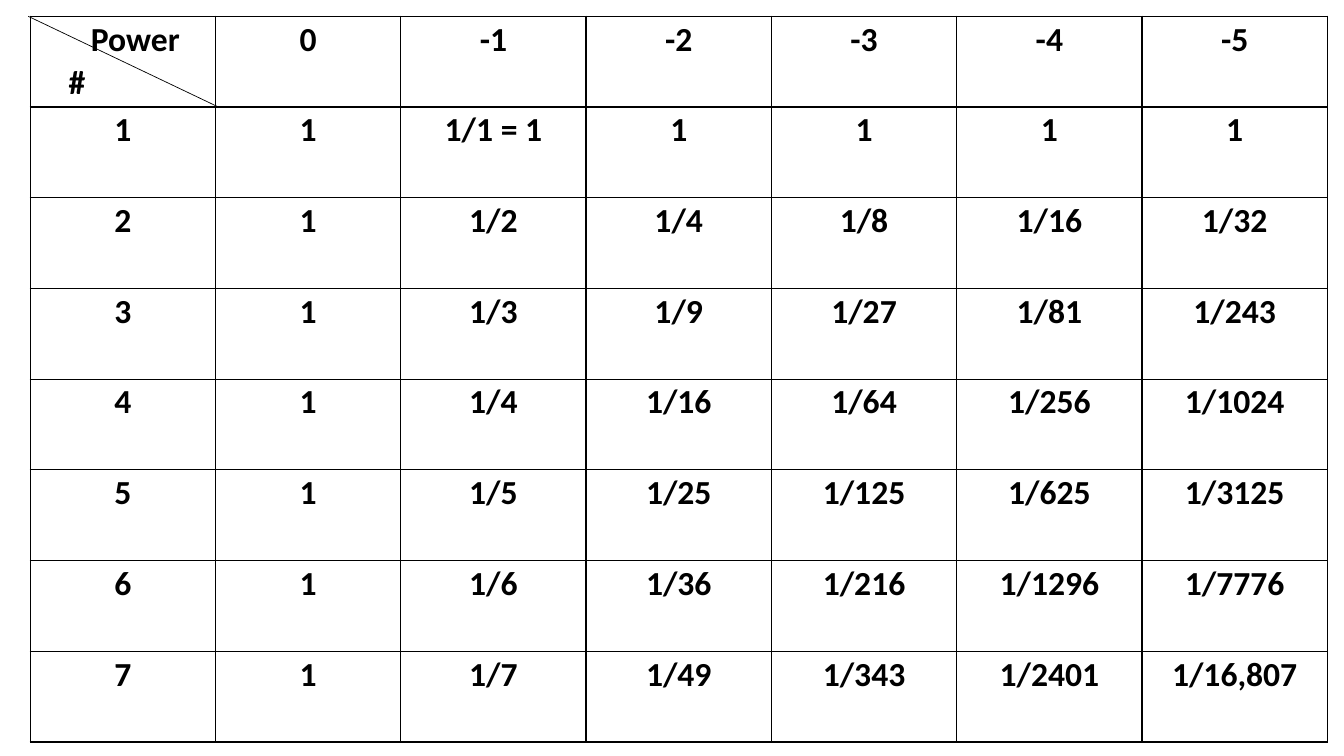
import pptx
import pptx.util
import pptx.dml.color
import pptx.enum.shapes
import pptx.enum.text
import pptx.oxml
import pptx.oxml.ns
from pptx.util import Cm

BLACK = pptx.dml.color.RGBColor(0, 0, 0)
FONT = {"name": "Calibri", "size": pptx.util.Pt(24), "bold": True}
INSET = {"margin_left": Cm(0.18), "margin_right": Cm(0.18),
         "margin_top": 0, "margin_bottom": 0}
CENTER = pptx.enum.text.PP_ALIGN.CENTER
LEFT = pptx.enum.text.PP_ALIGN.LEFT
NUMS = range(1, 8)
POWERS = range(6)


def write(para, text, align):
    para.alignment = align
    para.line_spacing = 1.07
    run = para.add_run()
    run.text = text
    for key, val in FONT.items():
        setattr(run.font, key, val)
    run.font.color.rgb = BLACK


def border(cell):
    """Draw a thin black line on all four sides of the cell."""
    props = cell._tc.get_or_add_tcPr()
    for side in ("lnL", "lnR", "lnT", "lnB"):
        props.append(pptx.oxml.parse_xml(
            f'<a:{side} {pptx.oxml.ns.nsdecls("a")} w="12700"><a:solidFill>'
            f'<a:srgbClr val="{BLACK}"/></a:solidFill></a:{side}>'))


deck = pptx.Presentation()
deck.slide_width, deck.slide_height = Cm(33.87), Cm(19.05)
slide = deck.slides.add_slide(deck.slide_layouts[6])

# Diagonal of the corner cell
slash = slide.shapes.add_connector(
    pptx.enum.shapes.MSO_CONNECTOR.STRAIGHT,
    Cm(0.71), Cm(0.41), Cm(5.49), Cm(2.69))
slash.line.color.rgb = BLACK
slash.line.width = pptx.util.Pt(0.5)
slash._element.spPr.append(pptx.oxml.parse_xml(
    f'<a:effectLst {pptx.oxml.ns.nsdecls("a")}/>'))

# Text of the grid: one row per number, one column per power
rows = [[""] + [str(-power) for power in POWERS]]
for num in NUMS:
    row = [str(num), "1"]
    for power in POWERS[1:]:
        value = num ** power
        digits = f"{value:,}" if value > 9999 else str(value)
        row.append("1" if num == 1 else f"1/{digits}")
    rows.append(row)
rows[1][2] = "1/1 = 1"

table = slide.shapes.add_table(
    len(rows), len(rows[0]), Cm(0.76), Cm(0.41), Cm(32.69), Cm(18.29)).table
table.first_row = False
table.horz_banding = False

for r, row in enumerate(rows):
    for c, text in enumerate(row):
        cell = table.cell(r, c)
        for key, val in INSET.items():
            setattr(cell, key, val)
        border(cell)
        cell.fill.background()
        if text:
            write(cell.text_frame.paragraphs[0], text, CENTER)

# Corner labels on either side of the diagonal
frame = table.cell(0, 0).text_frame
labels = [(frame.paragraphs[0], "Power", 1.35),
          (frame.add_paragraph(), "#", 0.79)]
for para, text, indent in labels:
    write(para, text, LEFT)
    para._p.get_or_add_pPr().set("marL", str(Cm(indent)))

deck.save("out.pptx")
